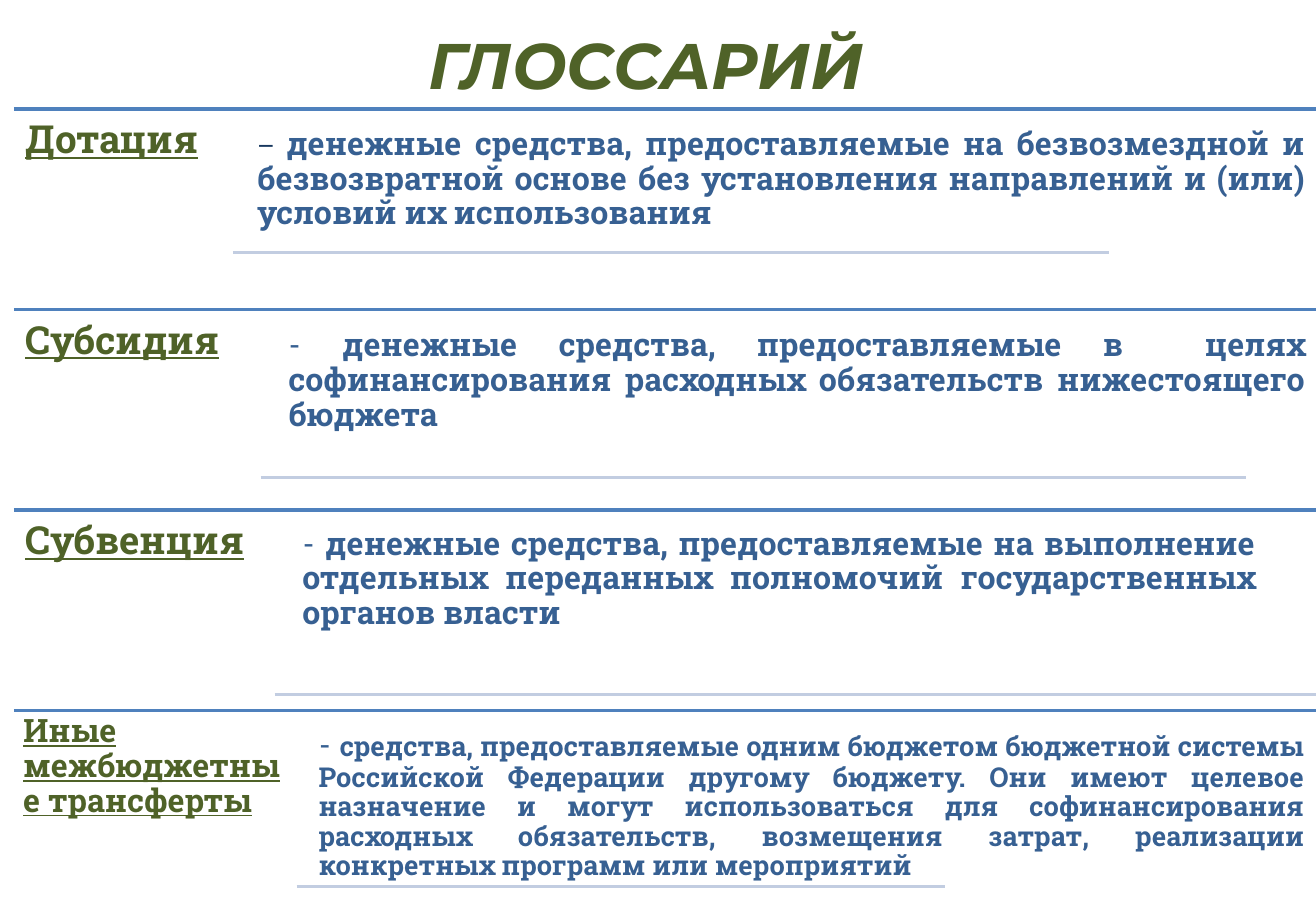
from dataclasses import dataclass

from lxml.etree import SubElement
from pptx import Presentation
from pptx.dml.color import RGBColor
from pptx.enum.shapes import MSO_CONNECTOR
from pptx.enum.text import MSO_ANCHOR, MSO_AUTO_SIZE, PP_ALIGN
from pptx.oxml.ns import qn
from pptx.util import Emu, Pt

PX = 9144  # EMU in one px, 100 px to the inch
SLIDE_WIDTH, SLIDE_HEIGHT = 1136, 793
ROWS_LEFT, ROWS_TOP, ROW_PITCH = 12, 94, 173


@dataclass(frozen=True)
class Theme:
    heading_font: str = "Montserrat"
    body_font: str = "Roboto Slab"
    green: str = "4F6228"
    navy: str = "17375E"
    blue: str = "376092"
    rule: str = "4F81BD"
    pale_rule: str = "C2CDE1"
    title_size: float = 40
    title_leading: float = 49.4
    term_size: float = 24
    text_size: float = 20
    small_size: float = 17
    dash_size: float = 16
    line_spacing: float = 0.9
    rule_width: float = 2


THEME = Theme()


@dataclass(frozen=True)
class Entry:
    """A glossary row; boxes are left, top, width, height from the row's corner."""
    term: str
    dash: str
    definition: str
    term_box: tuple
    definition_box: tuple
    underline: tuple  # left, top, width
    term_inset: int = 10
    definition_inset: int = 8
    term_size: float = THEME.term_size
    dash_size: float = THEME.text_size
    dash_color: str = THEME.blue
    definition_size: float = THEME.text_size


ENTRIES = [
    Entry("Дотация", "– ",
          "денежные средства, предоставляемые на безвозмездной и безвозвратной "
          "основе без установления направлений и (или) условий их использования",
          (0, 0, 189, 173), (203, 9, 919, 116), (189, 124, 756),
          definition_inset=7, dash_size=THEME.dash_size, dash_color=THEME.navy),
    Entry("Субсидия", "- ",
          "денежные средства, предоставляемые в  целях софинансирования "
          "расходных обязательств нижестоящего бюджета",
          (0, 0, 213, 173), (229, 9, 894, 136), (213, 145, 851)),
    Entry("Субвенция", "- ",
          "денежные средства, предоставляемые на выполнение отдельных "
          "переданных полномочий государственных органов власти",
          (0, 0, 225, 173), (241, 7, 839, 129), (225, 159, 899)),
    Entry("Иные межбюджетные трансферты", "- ",
          "средства, предоставляемые одним бюджетом бюджетной системы Российской "
          "Федерации другому бюджету. Они имеют целевое назначение и могут "
          "использоваться для софинансирования расходных обязательств, "
          "возмещения затрат, реализации конкретных программ или мероприятий",
          (0, -4, 244, 167), (255, 8, 867, 144), (244, 152, 560),
          term_inset=8, term_size=THEME.text_size, definition_size=THEME.small_size),
]


def add_rule(slide, left, top, width, color):
    x, y = Emu(left * PX), Emu(top * PX)
    line = slide.shapes.add_connector(
        MSO_CONNECTOR.STRAIGHT, x, y, Emu((left + width) * PX), y)
    line.line.color.rgb = RGBColor.from_string(color)
    line.line.width = Pt(THEME.rule_width)
    SubElement(line._element.spPr, qn("a:effectLst"))


def add_text_box(slide, left, top, width, height, inset_x, inset_y):
    """Add a wrapping, top-anchored box and return its text frame."""
    shape = slide.shapes.add_textbox(*(Emu(v * PX) for v in (left, top, width, height)))
    frame = shape.text_frame
    frame.word_wrap = True
    frame.vertical_anchor = MSO_ANCHOR.TOP
    frame.margin_left = frame.margin_right = Emu(inset_x * PX)
    frame.margin_top = frame.margin_bottom = Emu(inset_y * PX)
    return frame


def format_font(font, name, size, color, bold=False):
    font.name = name
    font.size = Pt(size)
    font.color.rgb = RGBColor.from_string(color)
    font.bold = bold


def add_title(slide, left, top, width, height):
    frame = add_text_box(slide, left, top, width, height, 10, 5)
    frame.auto_size = MSO_AUTO_SIZE.SHAPE_TO_FIT_TEXT
    frame.text = "ГЛОССАРИЙ"
    paragraph = frame.paragraphs[0]
    paragraph.alignment = PP_ALIGN.CENTER
    paragraph.line_spacing = Pt(THEME.title_leading)
    font = paragraph.runs[0].font
    format_font(font, THEME.heading_font, THEME.title_size, THEME.green, True)
    font.italic = True


def add_term(slide, entry, left, top, width, height):
    inset = entry.term_inset
    frame = add_text_box(slide, left, top, width, height, inset, inset)
    frame.text = entry.term
    paragraph = frame.paragraphs[0]
    paragraph.line_spacing = THEME.line_spacing
    font = paragraph.runs[0].font
    format_font(font, THEME.body_font, entry.term_size, THEME.green, True)
    font.underline = True


def add_definition(slide, entry, left, top, width, height):
    inset = entry.definition_inset
    frame = add_text_box(slide, left, top, width, height, inset, inset)
    paragraph = frame.paragraphs[0]
    paragraph.alignment = PP_ALIGN.JUSTIFY
    paragraph.line_spacing = THEME.line_spacing
    for text, size, color, bold in (
            (entry.dash, entry.dash_size, entry.dash_color, False),
            (entry.definition, entry.definition_size, THEME.blue, True)):
        run = paragraph.add_run()
        run.text = text
        format_font(run.font, THEME.body_font, size, color, bold)


def add_entry(slide, entry, left, top, width):
    def place(box):
        return left + box[0], top + box[1], *box[2:]

    add_rule(slide, left, top, width, THEME.rule)
    add_term(slide, entry, *place(entry.term_box))
    add_definition(slide, entry, *place(entry.definition_box))
    add_rule(slide, *place(entry.underline), THEME.pale_rule)


def main():
    presentation = Presentation()
    presentation.slide_width = Emu(SLIDE_WIDTH * PX)
    presentation.slide_height = Emu(SLIDE_HEIGHT * PX)
    slide = presentation.slides.add_slide(presentation.slide_layouts[6])
    for index, entry in enumerate(ENTRIES):
        add_entry(slide, entry, ROWS_LEFT, ROWS_TOP + index * ROW_PITCH,
                  SLIDE_WIDTH - ROWS_LEFT)
    add_title(slide, 284, 15, 547, 79)
    presentation.save("out.pptx")


if __name__ == "__main__":
    main()
